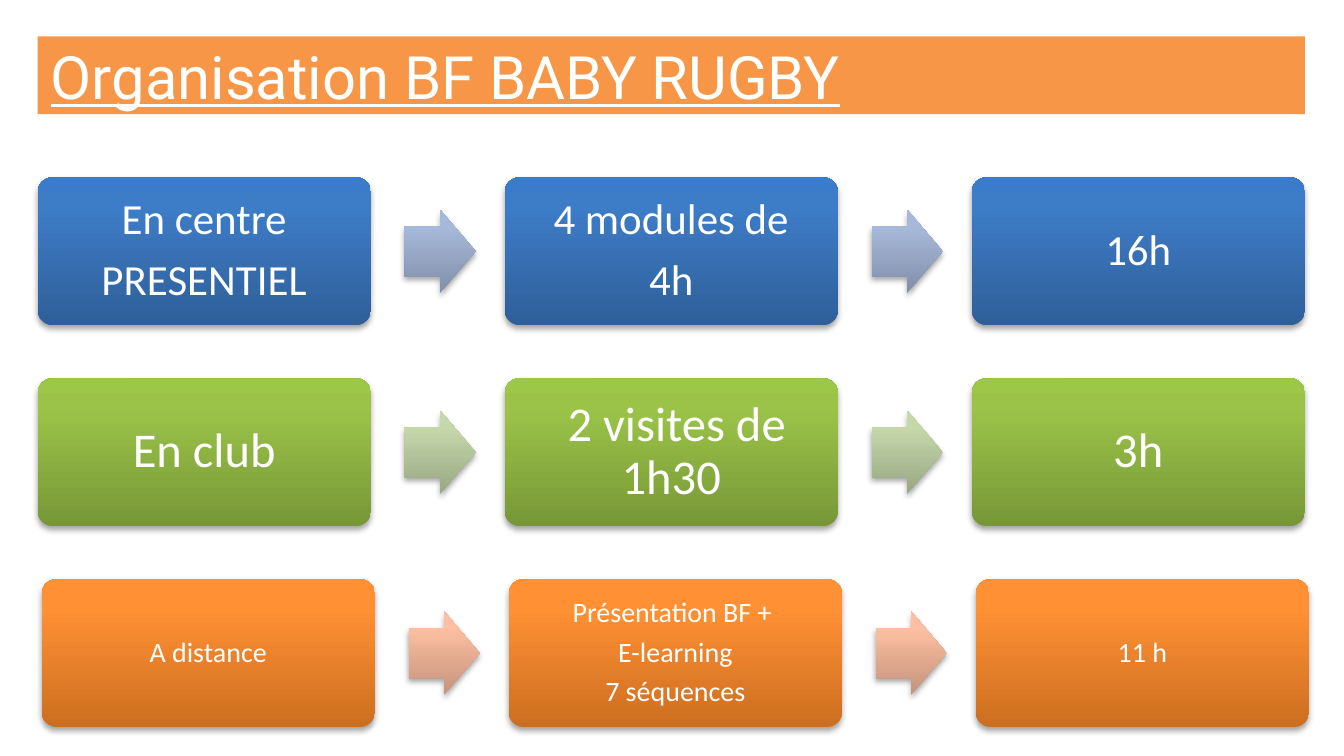
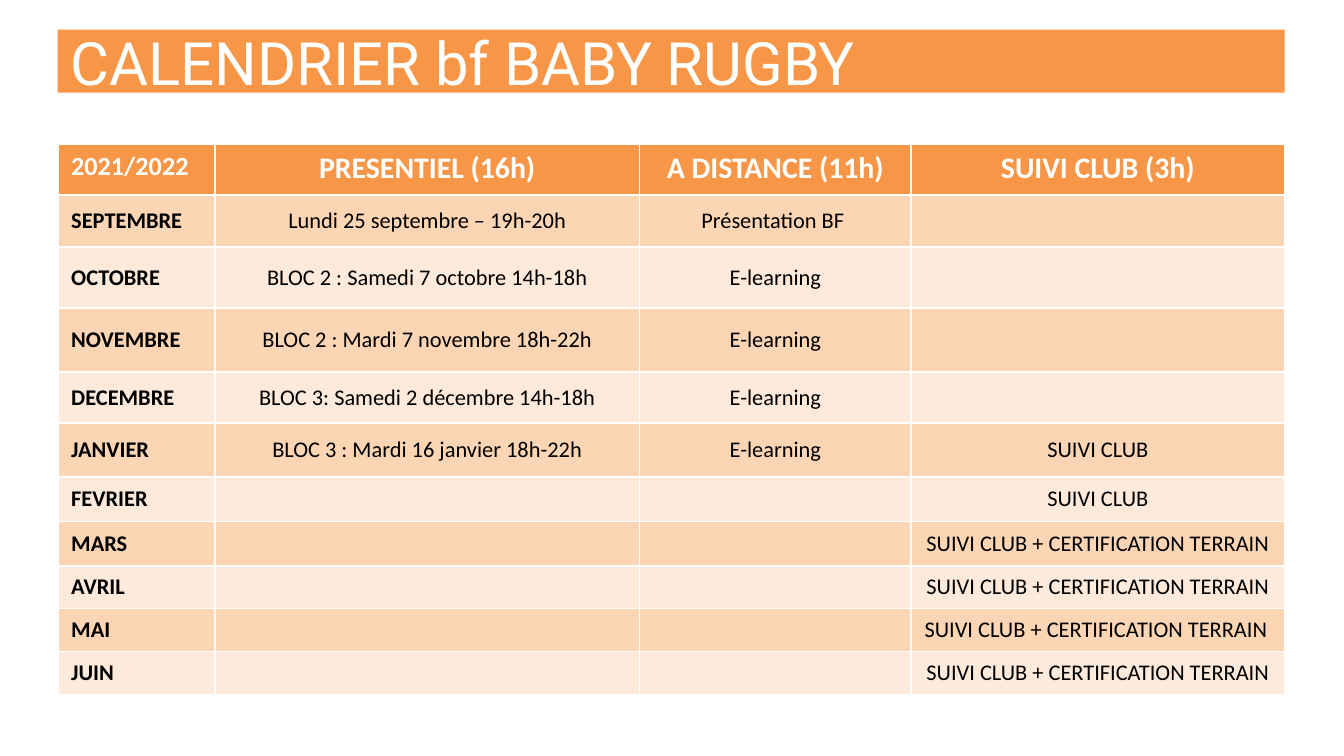
from copy import deepcopy
from typing import NamedTuple

from lxml import etree
from pptx import Presentation
from pptx.dml.color import RGBColor
from pptx.enum.shapes import MSO_SHAPE
from pptx.enum.text import MSO_ANCHOR, PP_ALIGN
from pptx.oxml.ns import qn
from pptx.util import Emu, Pt

RECTANGLE = MSO_SHAPE.RECTANGLE
ROUNDED = MSO_SHAPE.ROUNDED_RECTANGLE
ARROW = MSO_SHAPE.RIGHT_ARROW
LEFT, CENTER = PP_ALIGN.LEFT, PP_ALIGN.CENTER
TOP, MIDDLE = MSO_ANCHOR.TOP, MSO_ANCHOR.MIDDLE

EMU_PER_PX = 4572
PAGE_WIDTH, PAGE_HEIGHT = 2000, 1125
BODY_FONT, TITLE_FONT = "Calibri", "Roboto"
COLORS = {
    "accent": "F79646",
    "white": "FFFFFF",
    "black": "000000",
    "odd_row": "FCD5B5",
    "even_row": "FDEADA",
}
GRADIENTS = {
    "blue": ("2F5F99", "3D7CC7", "3A7CCB"),
    "blue_arrow": ("818FA8", "A7B9DA", "A7BADC"),
    "green": ("779737", "9BC348", "9DC746"),
    "green_arrow": ("98A683", "C6D8AA", "C7DAAA"),
    "orange": ("CC6E20", "FF9034", "FF9136"),
    "orange_arrow": ("C3937C", "FDBFA1", "FFBFA1"),
}
STOPS = (0, 0.8, 1)

BOX_WIDTH, BOX_HEIGHT, BOX_PITCH = 496, 220, 695
ARROW_WIDTH, ARROW_HEIGHT, ARROW_OFFSET = 106, 124, 546
FLOW_TOP, FLOW_PITCH = 264, 299


class Title(NamedTuple):
    text: str
    left: int
    top: int
    width: int
    height: int
    underline: bool = False


class Flow(NamedTuple):
    color: str
    left: int
    size: int
    inset: int
    steps: tuple[str, ...]


class Month(NamedTuple):
    name: str
    height: int
    on_site: str = ""
    remote: str = ""
    club: str = ""
    club_align: PP_ALIGN = CENTER


FLOWS = (
    Flow("blue", 56, 23, 20, ("En centre\nPRESENTIEL", "4 modules de\n4h", "16h")),
    Flow("green", 56, 26, 22, ("En club", " 2 visites de 1h30", "3h")),
    Flow("orange", 62, 15, 12,
         ("A distance", "Présentation BF + \nE-learning\n7 séquences", "11 h")),
)

CERTIFICATION = "SUIVI CLUB + CERTIFICATION TERRAIN"
HEADER_HEIGHT = 76
HEADERS = ("2021/2022", "PRESENTIEL (16h)", "A DISTANCE (11h)", "SUIVI CLUB (3h)")
COLUMN_WIDTHS = (234, 632, 404, 556)
MONTHS = (
    Month("SEPTEMBRE", 78, "Lundi 25 septembre – 19h-20h", "Présentation BF "),
    Month("OCTOBRE", 90, "BLOC 2 : Samedi 7 octobre 14h-18h", "E-learning"),
    Month("NOVEMBRE", 96, "BLOC 2 : Mardi 7 novembre 18h-22h", "E-learning"),
    Month("DECEMBRE", 76, "BLOC 3: Samedi 2 décembre 14h-18h", "E-learning"),
    Month("JANVIER", 80, "BLOC 3 : Mardi 16 janvier 18h-22h", "E-learning", "SUIVI CLUB"),
    Month("FEVRIER", 66, club="SUIVI CLUB"),
    Month("MARS", 66, club=CERTIFICATION),
    Month("AVRIL", 64, club=CERTIFICATION),
    Month("MAI", 64, club=CERTIFICATION, club_align=LEFT),
    Month("JUIN", 64, club=CERTIFICATION),
)


def px(length: int) -> Emu:
    return Emu(length * EMU_PER_PX)


def rgb(name: str) -> RGBColor:
    return RGBColor.from_string(COLORS[name])


def style_font(para, name: str, size: int, color: str, bold: bool = False) -> None:
    font = para.font
    font.name, font.size, font.bold = name, Pt(size), bold
    font.color.rgb = rgb(color)


def add_plain_shape(parent, kind, left: int, top: int, width: int, height: int):
    shape = parent.shapes.add_shape(kind, px(left), px(top), px(width), px(height))
    shape.line.fill.background()
    shape.shadow.inherit = False
    return shape


def add_title(page, title: Title) -> None:
    band = add_plain_shape(page, RECTANGLE, title.left, title.top, title.width, title.height)
    band.fill.solid()
    band.fill.fore_color.rgb = rgb("accent")
    frame = band.text_frame
    frame.vertical_anchor, frame.word_wrap = MIDDLE, True
    para = frame.paragraphs[0]
    para.text, para.alignment = title.text, LEFT
    style_font(para, TITLE_FONT, 32, "white")
    para.font.underline = title.underline


def add_glossy_shape(parent, kind, gradient: str, left: int, top: int, width: int, height: int):
    shape = add_plain_shape(parent, kind, left, top, width, height)
    fill = shape.fill
    fill.gradient()
    fill.gradient_angle = 90
    properties = shape._element.spPr
    stop_list = properties.find(".//" + qn("a:gsLst"))
    stop_list.insert(1, deepcopy(stop_list[0]))
    for stop, position, color in zip(fill.gradient_stops, STOPS, GRADIENTS[gradient]):
        stop.position = position
        stop.color.rgb = RGBColor.from_string(color)
    shadow = etree.SubElement(
        properties.find(qn("a:effectLst")), qn("a:outerShdw"),
        blurRad="40000", dist="23000", dir="5400000", rotWithShape="0")
    shade = etree.SubElement(shadow, qn("a:srgbClr"), val=COLORS["black"])
    etree.SubElement(shade, qn("a:alpha"), val="35000")
    return shape


def add_step(group, flow: Flow, text: str, left: int, top: int) -> None:
    box = add_glossy_shape(group, ROUNDED, flow.color, left, top, BOX_WIDTH, BOX_HEIGHT)
    box.adjustments[0] = 0.1
    frame = box.text_frame
    frame.vertical_anchor, frame.word_wrap = MIDDLE, True
    frame.margin_left = frame.margin_right = px(flow.inset)
    frame.margin_top = frame.margin_bottom = px(flow.inset)
    frame.text = text
    for para in frame.paragraphs:
        para.alignment, para.line_spacing = CENTER, 0.9
        para.space_after = Pt(round(flow.size * 0.33, 1))
        style_font(para, BODY_FONT, flow.size, "white")


def add_flow(page, flow: Flow, top: int) -> None:
    group = page.shapes.add_group_shape()
    arrow_top = top + (BOX_HEIGHT - ARROW_HEIGHT) // 2
    for index, text in enumerate(flow.steps):
        left = flow.left + index * BOX_PITCH
        add_step(group, flow, text, left, top)
        if index < len(flow.steps) - 1:
            arrow = add_glossy_shape(group, ARROW, f"{flow.color}_arrow",
                                     left + ARROW_OFFSET, arrow_top, ARROW_WIDTH, ARROW_HEIGHT)
            arrow.adjustments[0] = 0.6


def fill_cell(cell, text: str, fill: str, size: int, color: str, bold: bool,
              align: PP_ALIGN, anchor: MSO_ANCHOR) -> None:
    cell.fill.solid()
    cell.fill.fore_color.rgb = rgb(fill)
    cell.vertical_anchor = anchor
    para = cell.text_frame.paragraphs[0]
    para.alignment = align
    style_font(para, BODY_FONT, size, color, bold)
    if text:
        para.add_run().text = text
    else:
        para._p.get_or_add_endParaRPr().set("sz", str(size * 100))


def add_calendar(page, left: int, top: int) -> None:
    heights = (HEADER_HEIGHT, *(month.height for month in MONTHS))
    table = page.shapes.add_table(
        len(heights), len(HEADERS), px(left), px(top),
        px(sum(COLUMN_WIDTHS)), px(sum(heights))).table
    for column, width in zip(table.columns, COLUMN_WIDTHS):
        column.width = px(width)
    for row, height in zip(table.rows, heights):
        row.height = px(height)
    for index, text in enumerate(HEADERS):
        size, align = (16, CENTER) if index else (14, LEFT)
        fill_cell(table.cell(0, index), text, "accent", size, "white", True, align, TOP)
    for number, month in enumerate(MONTHS, 1):
        fill = "odd_row" if number % 2 else "even_row"
        entries = (
            (month.name, True, LEFT),
            (month.on_site, False, CENTER),
            (month.remote, False, CENTER),
            (month.club, False, month.club_align),
        )
        for index, (text, bold, align) in enumerate(entries):
            fill_cell(table.cell(number, index), text, fill, 12, "black", bold, align, MIDDLE)


def main() -> None:
    deck = Presentation()
    deck.slide_width, deck.slide_height = px(PAGE_WIDTH), px(PAGE_HEIGHT)
    blank = deck.slide_layouts[6]

    organisation = deck.slides.add_slide(blank)
    add_title(organisation, Title("Organisation BF BABY RUGBY", 56, 54, 1886, 116, True))
    for index, flow in enumerate(FLOWS):
        add_flow(organisation, flow, FLOW_TOP + index * FLOW_PITCH)

    calendar = deck.slides.add_slide(blank)
    add_calendar(calendar, 86, 214)
    add_title(calendar, Title("CALENDRIER bf BABY RUGBY", 86, 44, 1826, 94))

    deck.save("out.pptx")


if __name__ == "__main__":
    main()
